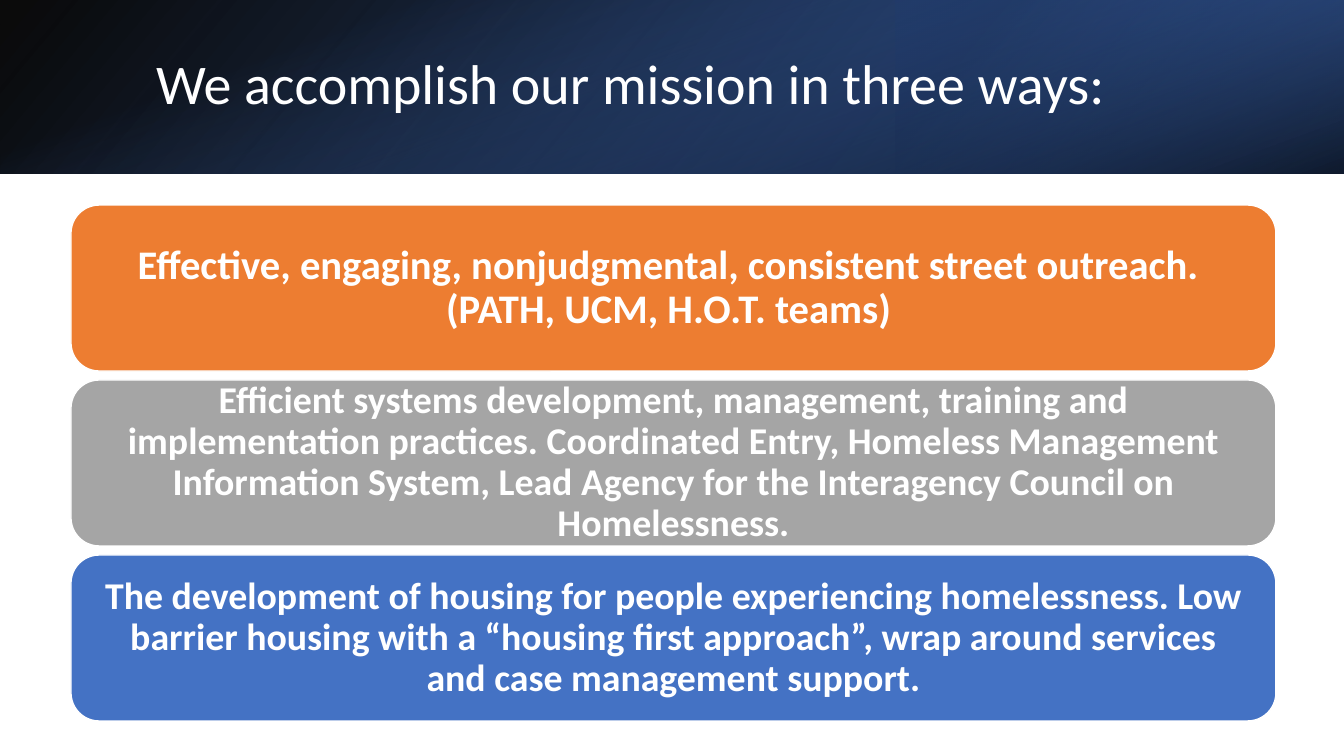
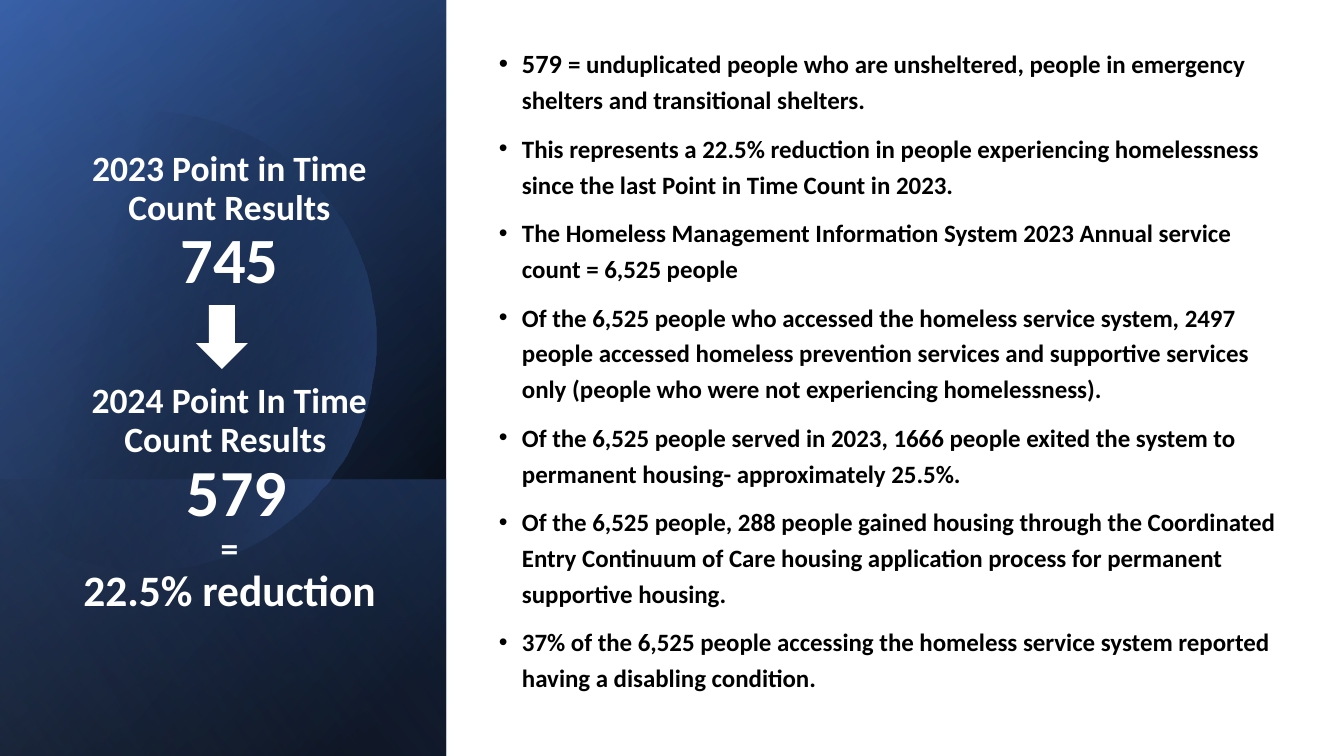
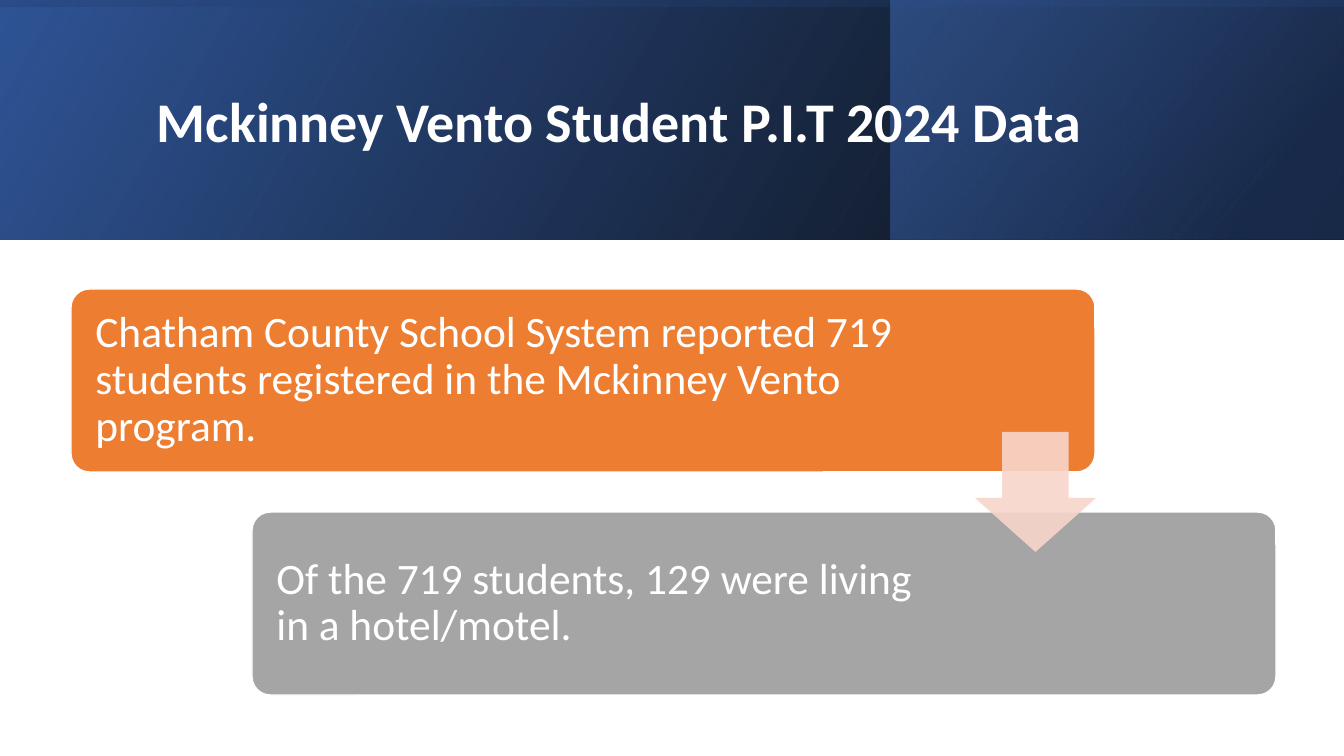
import math

import pptx
import pptx.util
import pptx.oxml
import pptx.oxml.ns
from pptx.dml.color import RGBColor
from pptx.enum.shapes import MSO_SHAPE
from pptx.enum.text import MSO_ANCHOR, MSO_AUTO_SIZE, PP_ALIGN

WIDE, HIGH = 1344, 756
SCALE = 12192000 / WIDE
FONT = "Calibri"
INSET = 5

WHITE = RGBColor(0xFF, 0xFF, 0xFF)
BLACK = RGBColor(0, 0, 0)
NAVY = RGBColor(0x1F, 0x38, 0x64)
DEEP = RGBColor(0x2F, 0x54, 0x96)
BLUE = RGBColor(0x44, 0x72, 0xC4)
PALE = RGBColor(0x8D, 0xA9, 0xDB)
ORANGE = RGBColor(0xED, 0x7D, 0x31)
GRAY = RGBColor(0xA5, 0xA5, 0xA5)
PINK = RGBColor(0xF7, 0xD5, 0xCB)

WAYS = [
    (ORANGE, 29, ["Effective, engaging, nonjudgmental, consistent street outreach. ",
                  "(PATH, UCM, H.O.T. teams) "]),
    (GRAY, 27, ["Efficient systems development, management, training and "
                "implementation practices. Coordinated Entry, Homeless Management "
                "Information System, Lead Agency for the Interagency Council on "
                "Homelessness."]),
    (BLUE, 27, ["The development of housing for people experiencing homelessness. "
                "Low barrier housing with a “housing first approach”, wrap around "
                "services and case management support."]),
]

# text, size, space before, all in points
COUNTS = [
    ("2023 Point in Time Count Results", 25.4, 0),
    ("745", 46.1, 0),
    ("2024 Point In Time Count Results ", 25.4, 61),
    (" 579", 47, 0),
    ("=", 25.4, 0),
    ("22.5% reduction", 31, 0),
]

FACTS = [
    "579 = unduplicated people who are unsheltered, people in emergency shelters "
    "and transitional shelters.",
    "This represents a 22.5% reduction in people experiencing homelessness since "
    "the last Point in Time Count in 2023.",
    "The Homeless Management Information System 2023 Annual service count = 6,525 people",
    "Of the 6,525 people who accessed the homeless service system, 2497 people "
    "accessed homeless prevention services and supportive services only (people who "
    "were not experiencing homelessness).",
    "Of the 6,525 people served in 2023, 1666 people exited the system to permanent "
    "housing- approximately 25.5%.",
    "Of the 6,525 people, 288 people gained housing through the Coordinated Entry "
    "Continuum of Care housing application process for permanent supportive housing.",
    "37% of the 6,525 people accessing the homeless service system reported having "
    "a disabling condition.",
]


def px(*sizes):
    return [round(size * SCALE) for size in sizes]


def shade(shape, stops, angle):
    """Fill with a gradient of (place, colour, opacity) stops, angle clockwise."""
    marks = "".join(
        f'<a:gs pos="{place * 1000}"><a:srgbClr val="{color}">'
        f'<a:alpha val="{alpha * 1000}"/></a:srgbClr></a:gs>'
        for place, color, alpha in stops)
    grad = pptx.oxml.parse_xml(
        f'<a:gradFill {pptx.oxml.ns.nsdecls("a")} rotWithShape="1">'
        f'<a:gsLst>{marks}</a:gsLst>'
        f'<a:lin ang="{angle * 60000}" scaled="0"/></a:gradFill>')
    shape.fill.background()
    props = shape.element.spPr
    props.replace(props.find(pptx.oxml.ns.qn("a:noFill")), grad)
    shape.line.fill.background()
    shape.shadow.inherit = False


def veil(slide, box, stops, angle, turn=0, flip=True):
    """Gradient rectangle that covers box after its turn."""
    x, y, w, h = box
    if turn % 180:
        x, y, w, h = x + (w - h) / 2, y + (h - w) / 2, h, w
    shape = slide.shapes.add_shape(MSO_SHAPE.RECTANGLE, *px(x, y, w, h))
    shape.rotation = turn
    if flip:
        shape.element.spPr.xfrm.set("flipH", "1")
    shade(shape, stops, angle)


def solid(slide, kind, box, color):
    shape = slide.shapes.add_shape(kind, *px(*box))
    shape.fill.solid()
    shape.fill.fore_color.rgb = color
    shape.line.fill.background()
    shape.shadow.inherit = False
    return shape


def setup(frame, anchor, left=INSET, right=INSET, edge=INSET):
    frame.word_wrap = True
    frame.auto_size = MSO_AUTO_SIZE.NONE
    frame.vertical_anchor = anchor
    frame.margin_left, frame.margin_right = px(left, right)
    frame.margin_top = frame.margin_bottom = px(edge)[0]


def style(para, size, color=WHITE, bold=False, align=PP_ALIGN.LEFT, lead=0.9, before=0):
    para.alignment = align
    para.line_spacing = lead
    para.space_before = pptx.util.Pt(before)
    font = para.font
    font.name, font.size, font.bold = FONT, pptx.util.Pt(size), bold
    font.color.rgb = color


def write(frame, lines):
    """Put one paragraph per line and return the paragraphs."""
    frame.text = "\n".join(lines)
    return frame.paragraphs


def title(slide, box, lines, anchor=MSO_ANCHOR.MIDDLE):
    shape = slide.shapes.title
    shape.left, shape.top, shape.width, shape.height = px(*box)
    setup(shape.text_frame, anchor)
    # keep the title in front of the bands
    slide.shapes._spTree.append(shape.element)
    return write(shape.text_frame, lines)


def card(slide, box, color, lines, size, round_by, left, right, **look):
    shape = solid(slide, MSO_SHAPE.ROUNDED_RECTANGLE, box, color)
    shape.adjustments[0] = round_by
    shape.line.color.rgb = WHITE
    shape.line.width = pptx.util.Pt(1)
    setup(shape.text_frame, MSO_ANCHOR.MIDDLE, left, right, 0)
    for para in write(shape.text_frame, lines):
        style(para, size, **look)


def bullet(para):
    props = para._p.get_or_add_pPr()
    left, hang = px(25, -23)
    props.set("marL", str(left))
    props.set("indent", str(hang))
    space = pptx.oxml.ns.nsdecls("a")
    mark = pptx.oxml.parse_xml(f'<a:buChar {space} char="•"/>')
    face = pptx.oxml.parse_xml(f'<a:buFont {space} typeface="Arial"/>')
    props.find(pptx.oxml.ns.qn("a:defRPr")).addprevious(face)
    face.addnext(mark)


def disc(slide, x, y, radius):
    """Circle cut off at the left edge of the slide."""
    limit = math.acos(-x / radius)
    steps = 90
    turns = [limit * (2 * step / steps - 1) for step in range(steps + 1)]
    spots = [(x + radius * math.cos(turn), y + radius * math.sin(turn)) for turn in turns]
    path = slide.shapes.build_freeform(*spots[0], scale=SCALE)
    path.add_line_segments(spots[1:], close=True)
    shade(path.convert_to_shape(), [(0, BLACK, 0), (29, BLACK, 0), (100, BLUE, 43)], 14)


def ways(slide):
    band = (0, 0, WIDE, 174)
    veil(slide, band, [(0, BLACK, 96), (100, DEEP, 100)], 140)
    veil(slide, (896, 0, 448, 174),
         [(0, NAVY, 68), (19, NAVY, 68), (100, BLUE, 79)], 320, 180)
    veil(slide, band, [(0, BLUE, 0), (23, BLUE, 0), (99, BLACK, 74), (100, BLACK, 74)],
         340, 90, False)
    head = title(slide, (151, 38, 1107, 97), ["We accomplish our mission in three ways:"])
    style(head[0], 40)
    for row, (color, size, lines) in enumerate(WAYS):
        card(slide, (71, 205 + 175 * row, 1205, 166), color, lines, size, 0.17, 19, 19,
             bold=True, align=PP_ALIGN.CENTER)


def counts(slide):
    panel = (0, 0, 446, HIGH)
    veil(slide, panel, [(0, BLACK, 100), (8, BLACK, 100), (100, DEEP, 100)], 50, 90)
    veil(slide, panel, [(0, BLACK, 0), (99, BLUE, 46), (100, BLUE, 46)], 30, 90)
    veil(slide, (0, 480, 446, 276),
         [(0, BLUE, 29), (2, BLUE, 29), (100, BLACK, 30)], 130, 90)
    disc(slide, 147, 341, 229)
    veil(slide, panel, [(0, BLACK, 0), (99, PALE, 11), (100, PALE, 11)], 120, 90)
    head = title(slide, (53, 146, 353, 490), [text for text, _, _ in COUNTS], MSO_ANCHOR.TOP)
    for para, (_, size, before) in zip(head, COUNTS):
        style(para, size, bold=True, align=PP_ALIGN.CENTER, before=before)
    solid(slide, MSO_SHAPE.DOWN_ARROW, (196, 305, 52, 64), WHITE)

    frame = slide.shapes.add_textbox(*px(492, 36, 808, 680)).text_frame
    setup(frame, MSO_ANCHOR.TOP)
    for row, para in enumerate(write(frame, FACTS)):
        style(para, 17.8, BLACK, True, lead=1.2, before=9 if row else 0)
        bullet(para)
    # the first fact opens with a slightly larger number
    first = frame.paragraphs[0]
    run = first.runs[0]
    run.text, rest = "579 ", run.text[4:]
    run.font.size = pptx.util.Pt(18.8)
    first.add_run().text = rest


def students(slide):
    band = (0, 0, WIDE, 240)
    veil(slide, band, [(0, BLACK, 96), (100, DEEP, 100)], 330)
    veil(slide, (891, 0, 453, 240),
         [(0, NAVY, 68), (19, NAVY, 68), (100, BLUE, 48)], 320)
    veil(slide, band, [(0, DEEP, 16), (23, DEEP, 16), (99, BLACK, 45), (100, BLACK, 45)],
         350, 270)
    head = title(slide, (152, 38, 1072, 173), ["Mckinney Vento Student P.I.T 2024 Data"])
    style(head[0], 40, bold=True)
    card(slide, (71, 289, 1024, 183), ORANGE,
         ["Chatham County School System reported 719 students registered in the "
          "Mckinney Vento program."], 31, 0.1, 19, 197)
    card(slide, (252, 512, 1024, 183), GRAY,
         ["Of the 719 students, 129 were living in a hotel/motel."], 31, 0.1, 19, 318)
    arrow = solid(slide, MSO_SHAPE.DOWN_ARROW, (975, 432, 121, 120), PINK)
    arrow.adjustments[0], arrow.adjustments[1] = 0.55, 0.45
    tint = arrow.element.spPr.find(".//" + pptx.oxml.ns.qn("a:srgbClr"))
    tint.append(pptx.oxml.parse_xml(
        f'<a:alpha {pptx.oxml.ns.nsdecls("a")} val="90000"/>'))


def main():
    deck = pptx.Presentation()
    deck.slide_width, deck.slide_height = px(WIDE, HIGH)
    for build in (ways, counts, students):
        build(deck.slides.add_slide(deck.slide_layouts[5]))
    deck.save("out.pptx")


if __name__ == "__main__":
    main()
